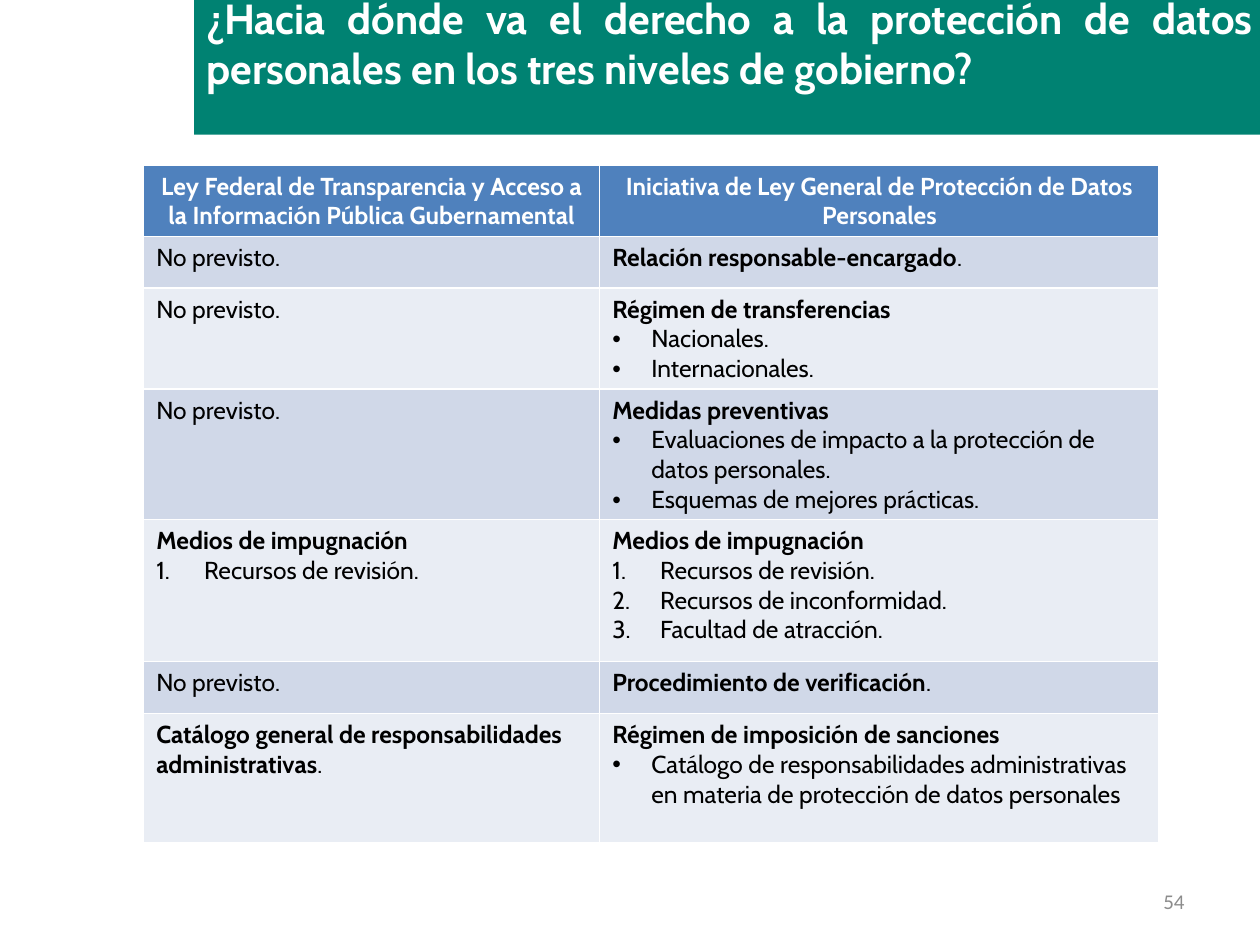
import pptx
import pptx.util
import pptx.dml.color
import pptx.enum.shapes
import pptx.enum.text
import pptx.oxml.ns
from lxml import etree

Inches = pptx.util.Inches
Pt = pptx.util.Pt
ALIGN = pptx.enum.text.PP_ALIGN
ANCHOR = pptx.enum.text.MSO_ANCHOR
COLORS = {"banner": "008272", "header": "4F81BD", "odd": "D0D8E8",
          "even": "E9EDF4", "white": "FFFFFF", "black": "000000", "number": "8C8C8C"}
# List style: (indent in inches, bullet element, its attributes)
LISTS = {"dot": (0.31, "a:buChar", {"char": "•"}),
         "num": (0.38, "a:buAutoNum", {"type": "arabicPeriod"})}


def add_span(para, text, color, **format_values):
    span = para.add_run()
    span.text = text
    for name, value in format_values.items():
        setattr(span.font, name, value)
    span.font.color.rgb = pptx.dml.color.RGBColor.from_string(COLORS[color])


def add_child(parent, tag, **attributes):
    return etree.SubElement(parent, pptx.oxml.ns.qn(tag), attributes)


deck = pptx.Presentation()
deck.slide_width, deck.slide_height = Inches(10), Inches(7.5)
page = deck.slides.add_slide(deck.slide_layouts[6])

# Title banner
banner = page.shapes.add_shape(pptx.enum.shapes.MSO_SHAPE.RECTANGLE,
                               Inches(1.54), 0, Inches(8.46), Inches(1.07))
banner.shadow.inherit = False
banner.fill.solid()
banner.fill.fore_color.rgb = pptx.dml.color.RGBColor.from_string(COLORS["banner"])
banner.line.fill.background()

# Page number and title
labels = [
    ("54", (7.17, 6.95, 2.33, 0.4), ALIGN.RIGHT, ANCHOR.MIDDLE, "number",
     {"size": Pt(12), "name": "Calibri"}),
    ("¿Hacia dónde va el derecho a la protección de datos personales en los tres niveles de gobierno?",
     (1.54, -0.11, 8.5, 0.91), ALIGN.JUSTIFY, ANCHOR.TOP, "white",
     {"size": Pt(24), "name": "Cabin", "bold": True}),
]
for text, place, align, anchor, color, format_values in labels:
    box = page.shapes.add_textbox(*map(Inches, place))
    box.text_frame.word_wrap = True
    box.text_frame.vertical_anchor = anchor
    para = box.text_frame.paragraphs[0]
    para.alignment = align
    add_span(para, text, color, **format_values)

# Comparison table: each paragraph is (list style, bold text, regular text)
not_covered = [(None, "", "No previsto.")]
remedies = [(None, "Medios de impugnación", ""), ("num", "", "Recursos de revisión.")]
rows = [
    (0.56, [(None, "Ley Federal de Transparencia y Acceso a la Información Pública Gubernamental", "")],
     [(None, "Iniciativa de Ley General de Protección de Datos Personales", "")]),
    (0.41, not_covered, [(None, "Relación responsable-encargado", ".")]),
    (0.8, not_covered, [(None, "Régimen de transferencias", ""),
                        ("dot", "", "Nacionales."),
                        ("dot", "", "Internacionales.")]),
    (1.03, not_covered, [(None, "Medidas preventivas", ""),
                         ("dot", "", "Evaluaciones de impacto a la protección de datos personales."),
                         ("dot", "", "Esquemas de mejores prácticas.")]),
    (1.13, remedies, remedies + [("num", "", "Recursos de inconformidad."),
                                 ("num", "", "Facultad de atracción.")]),
    (0.41, not_covered, [(None, "Procedimiento de verificación", ".")]),
    (1.03, [(None, "Catálogo general de responsabilidades administrativas", ".")],
     [(None, "Régimen de imposición de sanciones", ""),
      ("dot", "", "Catálogo de responsabilidades administrativas en materia de "
                  "protección de datos personales")]),
]
table = page.shapes.add_table(len(rows), 2, Inches(1.14), Inches(1.31), Inches(8.06),
                              Inches(sum(row[0] for row in rows))).table
for column, width in zip(table.columns, (3.62, 4.44)):
    column.width = Inches(width)

for row_index, (height, *contents) in enumerate(rows):
    table.rows[row_index].height = Inches(height)
    is_header = row_index == 0
    fill = "header" if is_header else ("even", "odd")[row_index % 2]
    for column_index, paragraphs in enumerate(contents):
        cell = table.cell(row_index, column_index)

        # White borders come before the fill in the cell properties
        properties = cell._tc.get_or_add_tcPr()
        for side in "LRTB":
            border = add_child(properties, f"a:ln{side}", w=str(Pt(1)))
            add_child(add_child(border, "a:solidFill"), "a:srgbClr", val=COLORS["white"])
        cell.fill.solid()
        cell.fill.fore_color.rgb = pptx.dml.color.RGBColor.from_string(COLORS[fill])

        frame = cell.text_frame
        for index, (style, bold_text, regular_text) in enumerate(paragraphs):
            para = frame.add_paragraph() if index else frame.paragraphs[0]
            para.alignment = ALIGN.CENTER if is_header else ALIGN.LEFT
            if style:
                indent, tag, attributes = LISTS[style]
                settings = para._p.get_or_add_pPr()
                settings.set("marL", str(Inches(indent)))
                settings.set("indent", str(-Inches(indent)))
                if style == "dot":
                    add_child(settings, "a:buFont", typeface="Arial")
                add_child(settings, tag, **attributes)
            for text, bold in ((bold_text, True), (regular_text, False)):
                if text:
                    add_span(para, text, "white" if is_header else "black",
                             size=Pt(14), name="Cabin", bold=bold)

deck.save("out.pptx")
